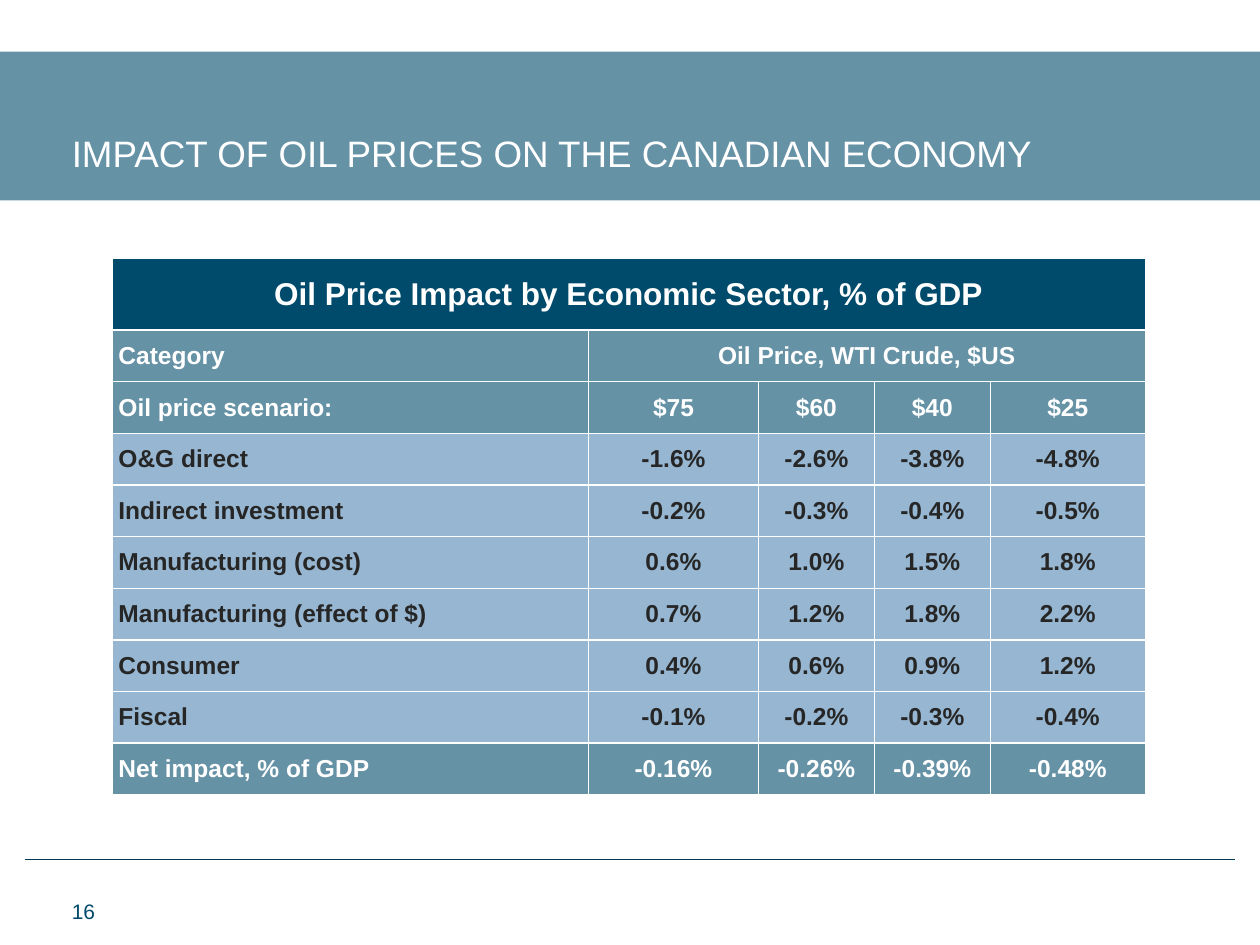
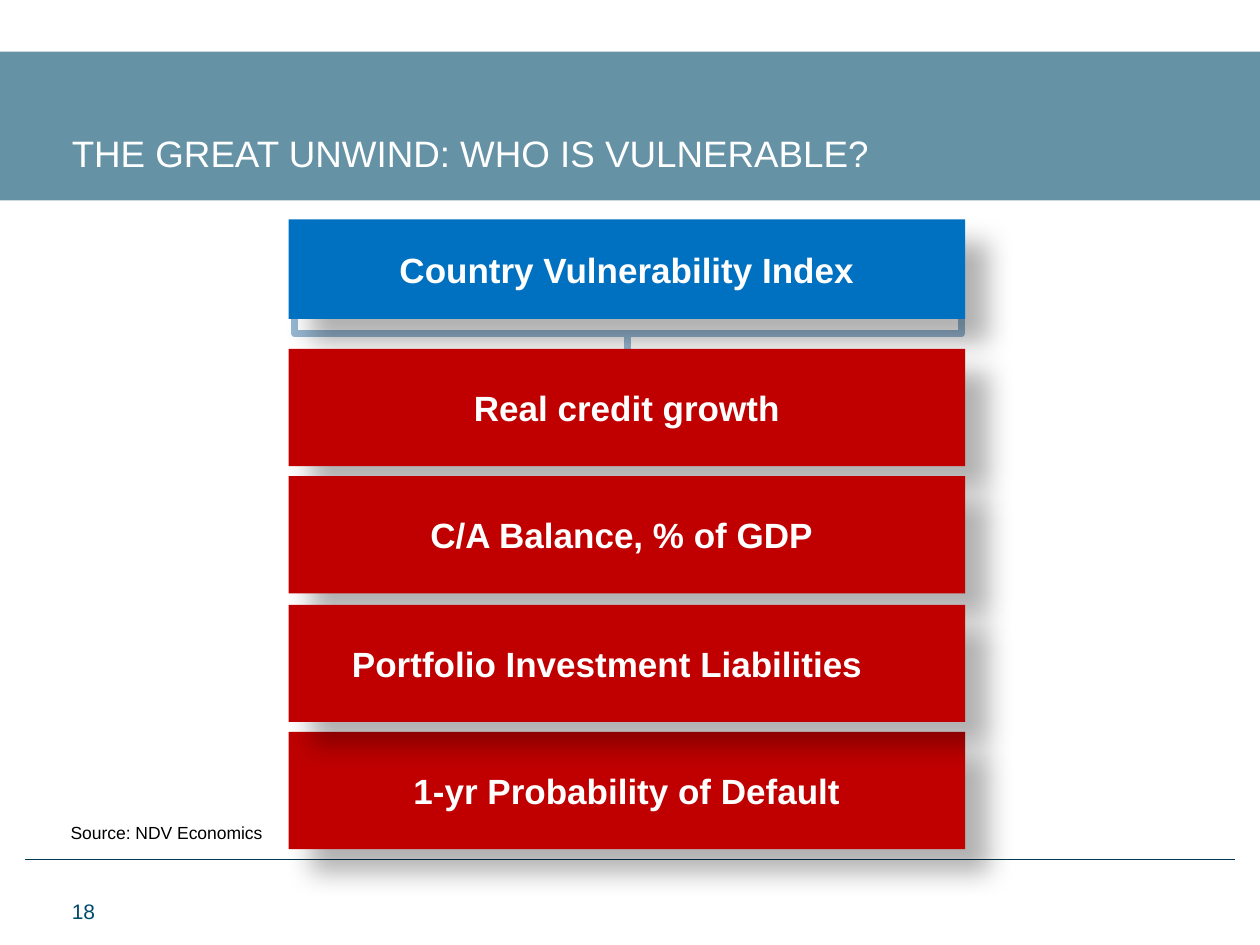
from typing import NamedTuple

from lxml.etree import SubElement
from pptx import Presentation
from pptx.dml.color import RGBColor
from pptx.enum.shapes import MSO_CONNECTOR as Connector, MSO_SHAPE as Shape
from pptx.enum.text import MSO_ANCHOR as Anchor, PP_ALIGN as Align
from pptx.oxml.ns import qn
from pptx.util import Emu, Pt

PX = 9144  # EMU in one px, 100 px to the inch
FONT = "Arial"
COLORS = {
    "band": "6692A6",
    "rule": "003A52",
    "navy": "004A6B",
    "sky": "96B6D1",
    "blue": "0070C0",
    "red": "C00000",
    "ink": "262626",
    "black": "000000",
    "white": "FFFFFF",
}


class Box(NamedTuple):
    left: int
    top: int
    width: int
    height: int


class Style(NamedTuple):
    size: int
    color: str
    bold: bool = False
    align: Align = Align.LEFT
    anchor: Anchor = Anchor.TOP
    insets: tuple[int, int, int, int] = (0, 0, 0, 0)  # left, top, right, bottom


class Card(NamedTuple):
    text: str
    box: Box
    color: str
    right_inset: int = 10


class TableRow(NamedTuple):
    cells: tuple[str, ...]
    fill: str
    color: str
    size: int = 14


TITLE_STYLE = Style(21, "white")
NUMBER_STYLE = Style(12, "navy", anchor=Anchor.MIDDLE, insets=(0, 5, 10, 5))
SOURCE_STYLE = Style(10, "black", insets=(0, 10, 0, 10))
CARD_STYLE = Style(20, "white", True, Align.CENTER, Anchor.MIDDLE)

# Oil price table
TABLE_LEFT, TABLE_TOP = 89, 205
COLUMN_WIDTHS = (378, 135, 92, 92, 123)
HEADING_HEIGHT, ROW_HEIGHT = 57, 41
SECTORS = (
    ("O&G direct", "-1.6%", "-2.6%", "-3.8%", "-4.8%"),
    ("Indirect investment", "-0.2%", "-0.3%", "-0.4%", "-0.5%"),
    ("Manufacturing (cost)", "0.6%", "1.0%", "1.5%", "1.8%"),
    ("Manufacturing (effect of $)", "0.7%", "1.2%", "1.8%", "2.2%"),
    ("Consumer", "0.4%", "0.6%", "0.9%", "1.2%"),
    ("Fiscal", "-0.1%", "-0.2%", "-0.3%", "-0.4%"),
)
TABLE_ROWS = (
    TableRow(("Oil Price Impact by Economic Sector, % of GDP",), "navy", "white", 18),
    TableRow(("Category", "Oil Price, WTI Crude, $US"), "band", "white"),
    TableRow(("Oil price scenario:", "$75", "$60", "$40", "$25"), "band", "white"),
    *(TableRow(sector, "sky", "ink") for sector in SECTORS),
    TableRow(("Net impact, % of GDP", "-0.16%", "-0.26%", "-0.39%", "-0.48%"),
             "band", "white"),
)

# Vulnerability cards: the index on top, its indicators stacked below
CARD_LEFT, CARD_WIDTH = 229, 537
INDEX_CARD = Card("Country Vulnerability Index", Box(CARD_LEFT, 174, CARD_WIDTH, 79), "blue")
INDICATORS = (  # text and right inset
    ("Real credit growth", 10),
    ("C/A Balance, % of GDP", 18),
    ("Portfolio Investment Liabilities", 41),
    ("1-yr Probability of Default", 10),
)
INDICATOR_CARDS = [
    Card(text, Box(CARD_LEFT, 277 + index * 203 // 2, CARD_WIDTH, 93), "red", right_inset)
    for index, (text, right_inset) in enumerate(INDICATORS)
]


def px(length: int) -> Emu:
    return Emu(length * PX)


def rgb(name: str) -> RGBColor:
    return RGBColor.from_string(COLORS[name])


def write(frame, text: str, style: Style) -> None:
    """Fill a text frame with one paragraph."""
    frame.text = text
    frame.word_wrap = True
    frame.vertical_anchor = style.anchor
    (frame.margin_left, frame.margin_top,
     frame.margin_right, frame.margin_bottom) = map(px, style.insets)
    format_para(frame.paragraphs[0], style)


def format_para(para, style: Style) -> None:
    para.alignment = style.align
    for span in para.runs:
        font = span.font
        font.name, font.size, font.bold = FONT, Pt(style.size), style.bold
        font.color.rgb = rgb(style.color)


def add_text(page, box: Box, text: str, style: Style) -> None:
    write(page.shapes.add_textbox(*map(px, box)).text_frame, text, style)


def add_rectangle(page, box: Box, color: str):
    shape = page.shapes.add_shape(Shape.RECTANGLE, *map(px, box))
    shape.shadow.inherit = False
    shape.fill.solid()
    shape.fill.fore_color.rgb = rgb(color)
    shape.line.fill.background()
    return shape


def add_line(page, start: tuple[int, int], end: tuple[int, int], color: str,
             width: float, kind: Connector = Connector.STRAIGHT):
    line = page.shapes.add_connector(kind, *map(px, start + end))
    line.line.color.rgb = rgb(color)
    line.line.width = Pt(width)
    SubElement(line._element.spPr, qn("a:effectLst"))
    return line


def add_card(page, card: Card) -> None:
    shape = add_rectangle(page, card.box, card.color)
    write(shape.text_frame, card.text,
          CARD_STYLE._replace(insets=(10, 5, card.right_inset, 5)))
    # Soft shadow to the lower right
    effects = shape._element.spPr.find(qn("a:effectLst"))
    shadow = SubElement(effects, qn("a:outerShdw"), blurRad=str(Pt(15)), dist=str(Pt(18)),
                        dir="2700000", algn="tl", rotWithShape="0")
    tint = SubElement(shadow, qn("a:srgbClr"), val=COLORS["black"])
    SubElement(tint, qn("a:alpha"), val="30000")


def add_bracket(page) -> None:
    """Join the index card to the indicators with a bracket and an arrow."""
    junction = (498, 265)
    arrow = add_line(page, junction, (498, 300), "sky", 4)
    SubElement(arrow.line._get_or_add_ln(), qn("a:tailEnd"), type="arrow")
    for arm_end in ((234, 242), (763, 242)):
        arm = add_line(page, junction, arm_end, "sky", 4, Connector.ELBOW)
        geometry = arm._element.spPr.find(qn("a:prstGeom"))
        guides = geometry.find(qn("a:avLst"))
        if guides is None:
            guides = SubElement(geometry, qn("a:avLst"))
        SubElement(guides, qn("a:gd"), name="adj1", fmla="val 100000")


def paint_cell(cell, fill: str) -> None:
    """Give a cell white borders and a plain fill."""
    properties = cell._tc.get_or_add_tcPr()
    for side in ("lnL", "lnR", "lnT", "lnB"):
        border = SubElement(properties, qn(f"a:{side}"), w=str(Pt(1)))
        solid = SubElement(border, qn("a:solidFill"))
        SubElement(solid, qn("a:srgbClr"), val=COLORS["white"])
    cell.fill.solid()
    cell.fill.fore_color.rgb = rgb(fill)


def add_price_table(page) -> None:
    height = HEADING_HEIGHT + ROW_HEIGHT * (len(TABLE_ROWS) - 1)
    box = Box(TABLE_LEFT, TABLE_TOP, sum(COLUMN_WIDTHS), height)
    table = page.shapes.add_table(len(TABLE_ROWS), len(COLUMN_WIDTHS), *map(px, box)).table
    table.first_row = table.horz_banding = False
    for column, width in zip(table.columns, COLUMN_WIDTHS):
        column.width = px(width)

    last = len(COLUMN_WIDTHS) - 1
    for index, row in enumerate(TABLE_ROWS):
        table.rows[index].height = px(ROW_HEIGHT if index else HEADING_HEIGHT)
        for cell in table.rows[index].cells:
            paint_cell(cell, row.fill)
        for column, text in enumerate(row.cells):
            cell = table.cell(index, column)
            is_label = index > 0 and column == 0
            cell.vertical_anchor = Anchor.MIDDLE
            cell.margin_left = px(5 if is_label else 0)
            cell.margin_right = cell.margin_top = cell.margin_bottom = 0
            cell.text_frame.text = text
            align = Align.LEFT if is_label else Align.CENTER
            format_para(cell.text_frame.paragraphs[0], Style(row.size, row.color, True, align))
        # The last text of a short row spans the remaining columns
        final = len(row.cells) - 1
        if final < last:
            table.cell(index, final).merge(table.cell(index, last))


def add_page(deck, title: str, number: int):
    """Add a slide with the shared band, rule, number and title."""
    page = deck.slides.add_slide(deck.slide_layouts[6])
    add_rectangle(page, Box(0, 41, 1000, 118), "band")
    add_line(page, (20, 682), (980, 682), "rule", 0.5)
    add_text(page, Box(57, 703, 186, 40), str(number), NUMBER_STYLE)
    add_text(page, Box(57, 104, 900, 52), title, TITLE_STYLE)
    return page


def main() -> None:
    deck = Presentation()
    deck.slide_width, deck.slide_height = px(1000), px(750)

    # Oil prices
    page = add_page(deck, "IMPACT OF OIL PRICES ON THE CANADIAN ECONOMY", 16)
    add_price_table(page)

    # Vulnerability index, with the lowest card at the back
    page = add_page(deck, "THE GREAT UNWIND: WHO IS VULNERABLE?", 18)
    *upper_cards, lowest_card = INDICATOR_CARDS
    add_card(page, lowest_card)
    add_bracket(page)
    add_card(page, INDEX_CARD)
    add_text(page, Box(56, 644, 375, 38), "Source: NDV Economics", SOURCE_STYLE)
    for card in upper_cards:
        add_card(page, card)

    deck.save("out.pptx")


if __name__ == "__main__":
    main()
